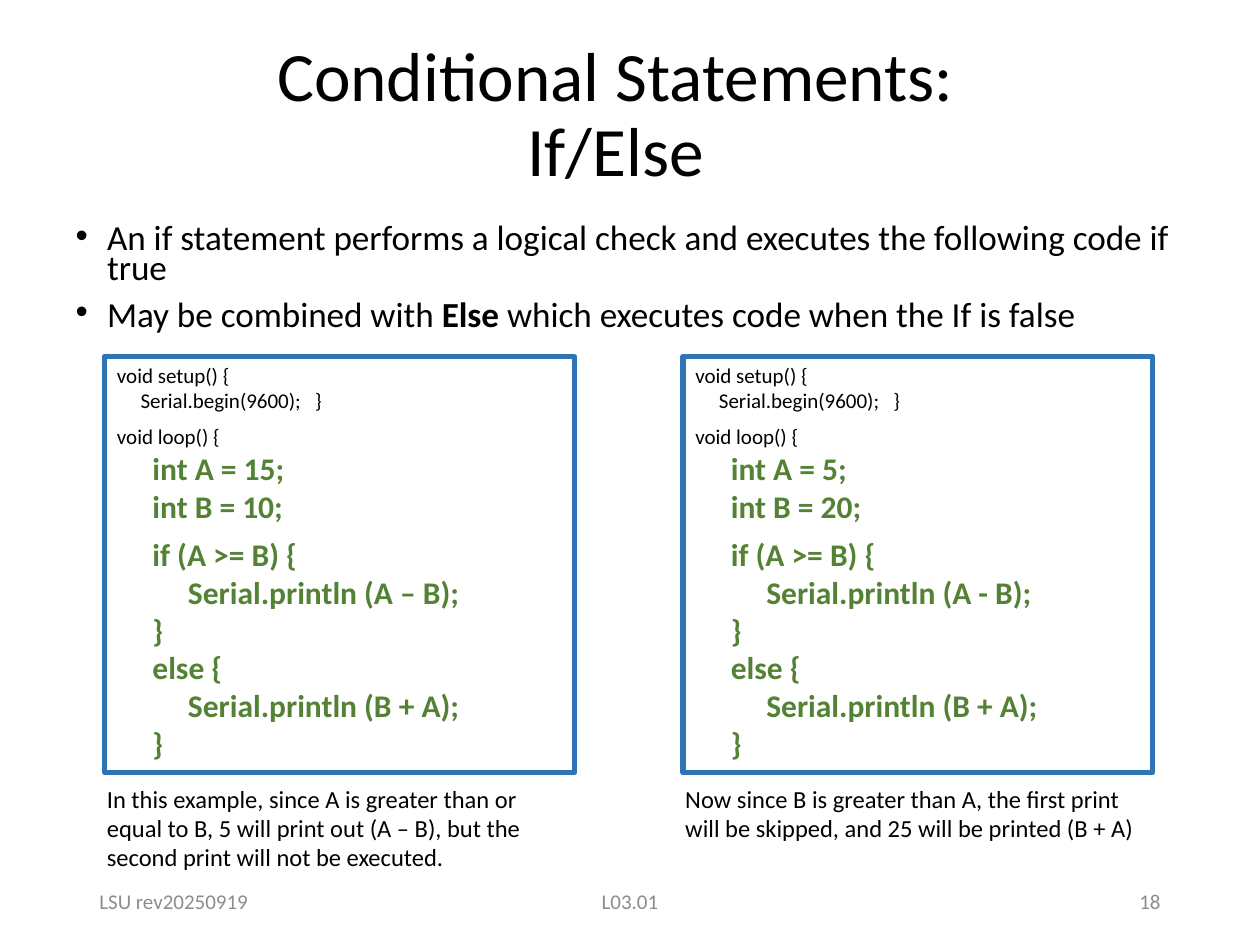
from pptx import Presentation
from pptx.dml.color import RGBColor
from pptx.enum.shapes import MSO_SHAPE as Shape
from pptx.enum.text import MSO_ANCHOR as Anchor, MSO_AUTO_SIZE as Auto, PP_ALIGN as Align
from pptx.util import Inches, Pt

BLACK = RGBColor(0x00, 0x00, 0x00)
BLUE = RGBColor(0x2E, 0x75, 0xB6)
GREEN = RGBColor(0x54, 0x82, 0x35)
GRAY = RGBColor(0x8C, 0x8C, 0x8C)

TITLE = "Conditional Statements: If/Else"
# Each point is a list of (text, bold) runs
POINTS = [
    [("An if statement performs a logical check and executes the following code if true", False)],
    [("May be combined with ", False), ("Else ", True),
     ("which executes code when the If is false", False)],
]
SETUP = ["void setup() {", "     Serial.begin(9600);   }"]
LOOP = ["void loop() {"]
# Values of A and B, minus sign, note below the code
CASES = [
    (15, 10, "–", "In this example, since A is greater than or equal to B, 5 will print "
     "out (A – B), but the second print will not be executed."),
    (5, 20, "-", "Now since B is greater than A, the first print will be skipped, "
     "and 25 will be printed (B + A)"),
]
# Left, width, alignment, text
FOOT = [
    (0.69, 2.25, Align.LEFT, "LSU rev20250919"),
    (3.31, 3.38, Align.CENTER, "L03.01"),
    (7.06, 2.25, Align.RIGHT, "18"),
]
CODE_LEFT, CODE_STEP, CODE_TOP = 0.83, 4.59, 2.83
NOTE_SHIFT, NOTE_TOP = -0.08, 6.17


def branch(minus):
    return ["     if (A >= B) {", f"          Serial.println (A {minus} B);", "     }",
            "     else {", "          Serial.println (B + A);", "     }"]


def write(frame, paras, size=12, color=BLACK, bold=False, align=Align.LEFT,
          gap=0, lines=None, indent=0):
    """Add paragraphs, each a string or (text, bold) runs; gap goes before the first unless the box is empty."""
    fresh = not frame.text
    for i, runs in enumerate(paras):
        first = fresh and i == 0
        para = frame.paragraphs[0] if first else frame.add_paragraph()
        para.alignment = align
        para.space_before = Pt(0 if first or (i and not indent) else gap)
        if lines:
            para.line_spacing = lines
        if indent:
            props = para._p.get_or_add_pPr()
            props.set("marL", str(Inches(indent)))
            props.set("indent", str(-Inches(indent)))
        for text, strong in [(runs, bold)] if isinstance(runs, str) else runs:
            run = para.add_run()
            run.text = text
            font = run.font
            font.name, font.size, font.bold = "Calibri", Pt(size), strong
            font.color.rgb = color


def place(shape, left, top, width, height):
    shape.left, shape.top = Inches(left), Inches(top)
    shape.width, shape.height = Inches(width), Inches(height)


def setup(shape, anchor=Anchor.TOP):
    frame = shape.text_frame
    frame.word_wrap = True
    frame.auto_size = Auto.NONE
    frame.vertical_anchor = anchor
    return frame


def add_box(slide, left, top, width, height, anchor=Anchor.TOP):
    box = slide.shapes.add_textbox(*map(Inches, (left, top, width, height)))
    return setup(box, anchor)


def add_code(slide, left, a, b, minus):
    box = slide.shapes.add_shape(
        Shape.RECTANGLE, *map(Inches, (left, CODE_TOP, 3.73, 3.3)))
    box.shadow.inherit = False
    box.fill.background()
    box.line.color.rgb = BLUE
    box.line.width = Pt(3)
    frame = setup(box)
    write(frame, SETUP)
    write(frame, LOOP, gap=6)
    bright = dict(size=18, color=GREEN, bold=True)
    write(frame, [f"     int A = {a};", f"     int B = {b};"], **bright)
    write(frame, branch(minus), gap=6, **bright)


def main():
    deck = Presentation()
    deck.slide_width, deck.slide_height = Inches(10), Inches(7.5)
    slide = deck.slides.add_slide(deck.slide_layouts[1])

    title, body = slide.shapes.title, slide.placeholders[1]
    place(title, 1.51, 0.3, 6.75, 1.25)
    write(setup(title, Anchor.MIDDLE), [TITLE], size=39.6, align=Align.CENTER, lines=0.9)
    place(body, 0.5, 1.75, 8.92, 1)
    write(setup(body), POINTS, size=20.1, gap=10, lines=0.7, indent=0.25)

    for i, (a, b, minus, note) in enumerate(CASES):
        left = CODE_LEFT + i * CODE_STEP
        add_code(slide, left, a, b, minus)
        write(add_box(slide, left + NOTE_SHIFT, NOTE_TOP, 3.83, 0.81), [note], size=14)

    for left, width, align, text in FOOT:
        frame = add_box(slide, left, 6.95, width, 0.4, Anchor.MIDDLE)
        write(frame, [text], color=GRAY, align=align)

    deck.save("out.pptx")


if __name__ == "__main__":
    main()
